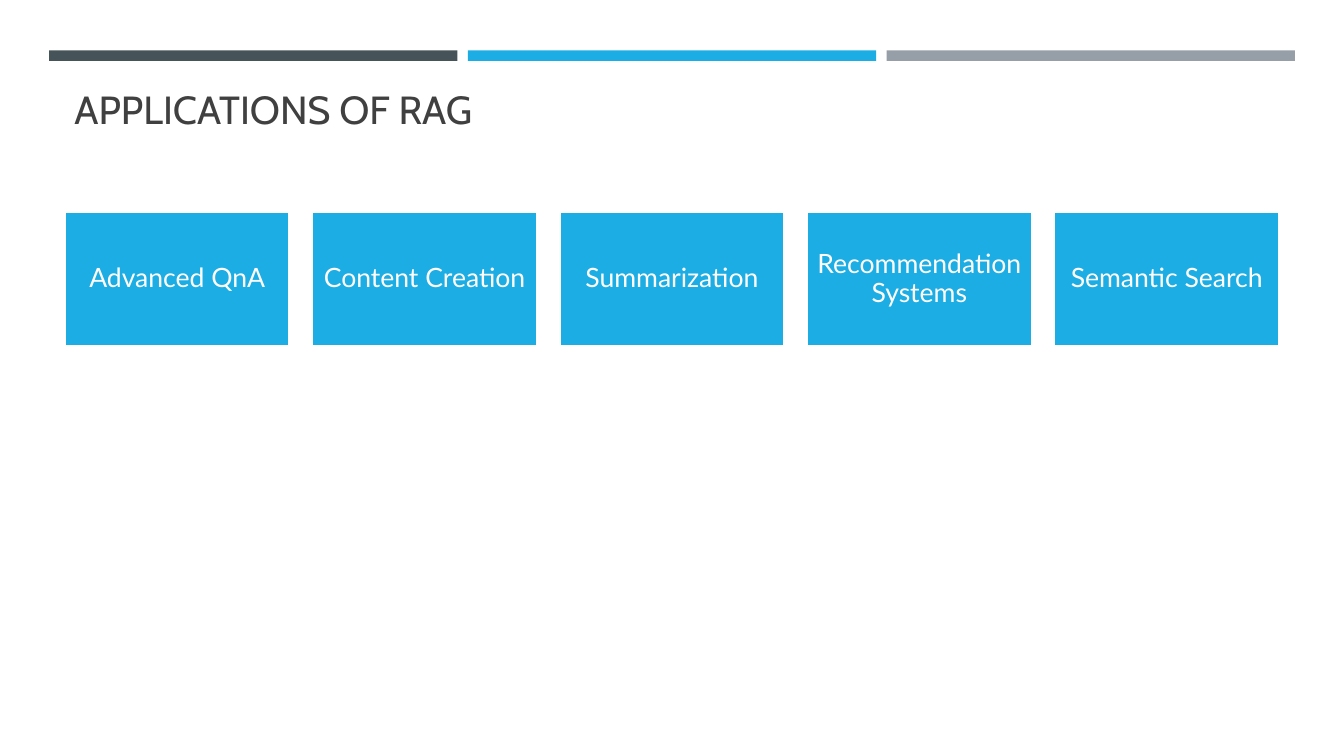
from collections import namedtuple

from pptx import Presentation
from pptx.dml.color import RGBColor
from pptx.enum import shapes, text
from pptx.util import Pt

Box = namedtuple("Box", "left top width height")

COLOURS = {
    "slate": "465359",
    "blue": "1CADE4",
    "grey": "969FA7",
    "title": "404040",
    "white": "FFFFFF",
}
APPLICATIONS = [
    "Advanced QnA",
    "Content Creation",
    "Summarization",
    "Recommendation Systems",
    "Semantic Search",
]


def colour(name):
    """Return the named colour as an RGB value."""
    return RGBColor.from_string(COLOURS[name])


def apply_format(target, values):
    """Set each attribute in values on the target."""
    for name, value in values.items():
        setattr(target, name, value)


def split_columns(box, count, gap):
    """Divide a box into equal columns separated by a gap."""
    width = (box.width - gap * (count - 1)) / count
    return [Box(box.left + i * (width + gap), box.top, width, box.height)
            for i in range(count)]


def add_block(page, box, fill):
    """Add a filled rectangle without shadow or outline."""
    block = page.shapes.add_shape(
        shapes.MSO_SHAPE.RECTANGLE, *(Pt(length) for length in box))
    block.shadow.inherit = False
    block.fill.solid()
    block.fill.fore_color.rgb = colour(fill)
    block.line.fill.background()
    return block


def write_text(frame, words, frame_format, para_format, font_format, ink):
    """Write one formatted paragraph into a text frame."""
    apply_format(frame, frame_format)
    para = frame.paragraphs[0]
    apply_format(para, para_format)
    span = para.add_run()
    span.text = words
    apply_format(span.font, font_format)
    span.font.color.rgb = colour(ink)


def add_header_bars(page, box):
    """Draw the three coloured bars across the top."""
    names = ["slate", "blue", "grey"]
    for name, column in zip(names, split_columns(box, len(names), 7.5)):
        add_block(page, column, name)


def add_title(page, box):
    """Place and format the title placeholder."""
    title = page.shapes.title
    apply_format(title, {side: Pt(length) for side, length in box._asdict().items()})
    write_text(
        title.text_frame, "APPLICATIONS OF RAG",
        {"vertical_anchor": text.MSO_ANCHOR.BOTTOM,
         "auto_size": text.MSO_AUTO_SIZE.NONE, "word_wrap": True},
        {"alignment": text.PP_ALIGN.LEFT},
        {"name": "Cabin", "size": Pt(28)}, "title")


def add_application_cards(page, box):
    """Lay out one labelled card for each application."""
    frame_format = {f"margin_{side}": Pt(5.7)
                    for side in ("left", "top", "right", "bottom")}
    frame_format.update(vertical_anchor=text.MSO_ANCHOR.MIDDLE, word_wrap=True)
    columns = split_columns(box, len(APPLICATIONS), 16)
    for label, column in zip(APPLICATIONS, columns):
        card = add_block(page, column, "blue")
        card.line.color.rgb = colour("white")
        card.line.width = Pt(1.75)
        write_text(
            card.text_frame, label, frame_format,
            {"alignment": text.PP_ALIGN.CENTER, "line_spacing": 0.9},
            {"name": "Lato", "size": Pt(19)}, "white")


def main():
    """Build and save the slide."""
    deck = Presentation()
    apply_format(deck, {"slide_width": Pt(960), "slide_height": Pt(540)})
    page = deck.slides.add_slide(deck.slide_layouts[5])
    add_header_bars(page, Box(35, 36, 890, 7.5))
    add_title(page, Box(46, 55.5, 868, 42.5))
    add_application_cards(page, Box(46.25, 151.5, 867.5, 96))
    deck.save("out.pptx")


if __name__ == "__main__":
    main()
